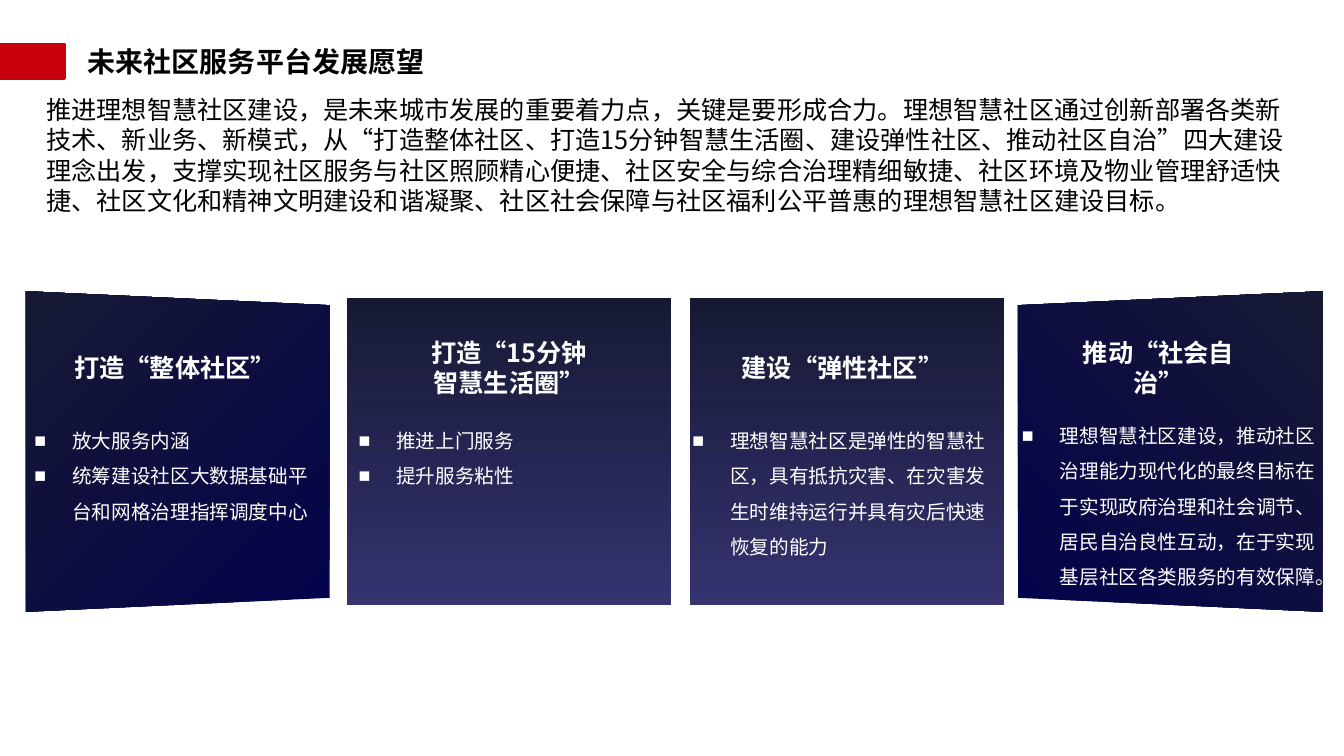
from lxml.etree import SubElement
from pptx import Presentation
from pptx.dml.color import RGBColor
from pptx.enum.shapes import MSO_SHAPE as Shape
from pptx.enum.text import MSO_ANCHOR as Anchor, PP_ALIGN as Align
from pptx.oxml.ns import qn
from pptx.util import Pt

SANS = "Noto Sans CJK SC"


def color(code):
    return RGBColor.from_string(code)


def write(box, lines, size, code, face=SANS, bold=False, align=Align.LEFT, bullet=False):
    """Fill a text box with paragraphs in one style."""
    frame = box.text_frame
    frame.word_wrap = True
    frame.text = "\n".join(lines)
    for para in frame.paragraphs:
        para.alignment = align
        props = para._p.get_or_add_pPr()
        if bullet:
            para.line_spacing = 1.5
            props.set("marL", str(Pt(27)))
            props.set("indent", str(Pt(-27)))
            SubElement(props, qn("a:buFont")).set("typeface", "Arial")
            SubElement(props, qn("a:buChar")).set("char", "■")
        font = para.font
        font.size, font.bold = Pt(size), bold
        font.color.rgb = color(code)
        font.name = face
        SubElement(props.find(qn("a:defRPr")), qn("a:ea")).set("typeface", SANS)


deck = Presentation()
deck.slide_width, deck.slide_height = Pt(960), Pt(540)
slide = deck.slides.add_slide(deck.slide_layouts[5])
shapes = slide.shapes

title = shapes.title
title.left, title.top, title.width, title.height = Pt(55.5), Pt(28), Pt(505), Pt(32)
title.text_frame.vertical_anchor = Anchor.TOP
write(title, ["未来社区服务平台发展愿望"], 20, "000000", bold=True)

mark = shapes.add_shape(Shape.RECTANGLE, 0, Pt(31.5), Pt(46), Pt(24.5))
mark.shadow.inherit = False
mark.fill.solid()
mark.fill.fore_color.rgb = mark.line.color.rgb = color("C7000B")
mark.line.width = Pt(2)

intro = shapes.add_textbox(Pt(26), Pt(64), Pt(905), Pt(94.5))
write(intro, [
    "推进理想智慧社区建设，是未来城市发展的重要着力点，关键是要形成合力。"
    "理想智慧社区通过创新部署各类新技术、新业务、新模式，"
    "从“打造整体社区、打造15分钟智慧生活圈、建设弹性社区、推动社区自治”四大建设理念出发，"
    "支撑实现社区服务与社区照顾精心便捷、社区安全与综合治理精细敏捷、"
    "社区环境及物业管理舒适快捷、社区文化和精神文明建设和谐凝聚、"
    "社区社会保障与社区福利公平普惠的理想智慧社区建设目标。"], 18, "000000")

# Panel left and right, flare of each side, gradient angle,
# heading left and width, heading, list left, width and inset, list lines
panels = [
    (18.5, 235.5, 5, -5, 135, 34.5, 181, "打造“整体社区”", 17.5, 217, 7.2,
     ["放大服务内涵", "统筹建设社区大数据基础平台和网格治理指挥调度中心"]),
    (248, 479, 0, 0, 90, 296, 135.5, "打造“15分钟智慧生活圈”", 249, 228, 7.2,
     ["推进上门服务", "提升服务粘性"]),
    (493, 717, 0, 0, 90, 522.5, 158.5, "建设“弹性社区”", 487.5, 228, 7.2,
     ["理想智慧社区是弹性的智慧社区，具有抵抗灾害、在灾害发生时维持运行并具有灾后快速恢复的能力"]),
    (727, 944.5, -5, 5, 45, 754.5, 146, "推动“社会自治”", 730, 210, 0,
     ["理想智慧社区建设，推动社区治理能力现代化的最终目标在于实现政府治理和社会调节、"
      "居民自治良性互动，在于实现基层社区各类服务的有效保障。"]),
]
top, base = 213, 432
for left, right, near, far, angle, head_x, head_w, head, list_x, list_w, inset, lines in panels:
    if near:
        path = shapes.build_freeform(Pt(left), Pt(top - near))
        path.add_line_segments([(Pt(right), Pt(top - far)), (Pt(right), Pt(base + far)),
                                (Pt(left), Pt(base + near))])
        panel = path.convert_to_shape()
    else:
        panel = shapes.add_shape(Shape.RECTANGLE, Pt(left), Pt(top),
                                 Pt(right - left), Pt(base - top))
    panel.shadow.inherit = False
    panel.line.fill.background()
    panel.fill.gradient()
    panel.fill.gradient_angle = angle
    for stop, code in zip(panel.fill.gradient_stops, ["04034B", "161934"]):
        stop.color.rgb = color(code)
    if not near:
        tint = panel._element.spPr.find(".//" + qn("a:srgbClr"))
        SubElement(tint, qn("a:alpha")).set("val", "80000")

    label = shapes.add_textbox(Pt(head_x), Pt(250.5), Pt(head_w), Pt(24))
    label.text_frame.vertical_anchor = Anchor.MIDDLE
    write(label, [head], 18, "FFFFFF", bold=True, align=Align.CENTER)

    points = shapes.add_textbox(Pt(list_x), Pt(294.5), Pt(list_w), Pt(108.5))
    frame = points.text_frame
    frame.margin_left = frame.margin_right = Pt(inset)
    frame.margin_top = frame.margin_bottom = Pt(inset / 2)
    write(points, lines, 14, "FFFFFF", face="Arial", bullet=True)

deck.save("out.pptx")
